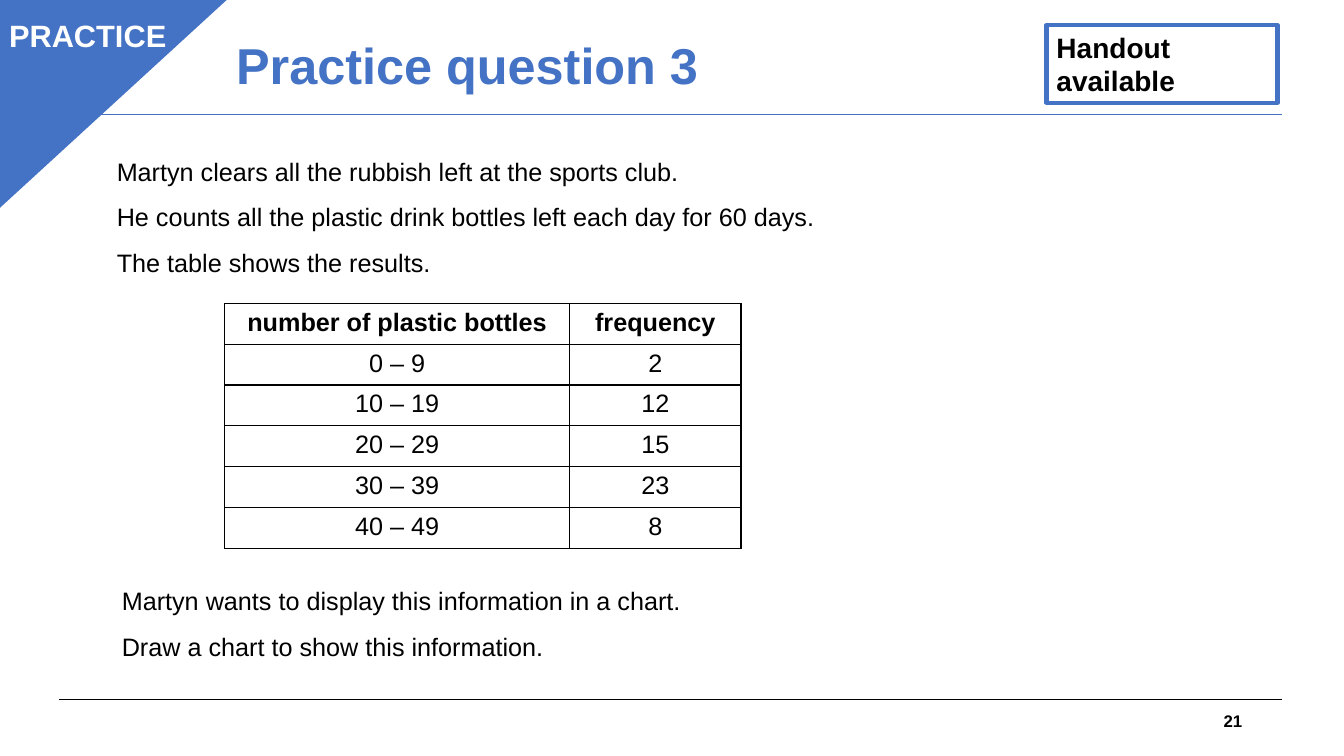
from dataclasses import dataclass

from lxml import etree
from pptx import Presentation, util as u
from pptx.dml.color import RGBColor
from pptx.enum import shapes, text
from pptx.oxml import ns

Inches = u.Inches


@dataclass(frozen=True)
class Theme:
    font: str = "Arial"
    blue: str = "4472C4"
    black: str = "000000"
    white: str = "FFFFFF"
    title: int = 36
    badge: int = 22
    label: int = 20
    body: int = 18
    footer: int = 12


THEME = Theme()
ALIGN = text.PP_ALIGN
ANCHOR = text.MSO_ANCHOR


def color(value):
    return RGBColor.from_string(value)


def write(frame, lines, size=THEME.body, fill=THEME.black, bold=False,
          align=ALIGN.LEFT, spacing=None):
    """Fill a text frame, one paragraph for each line."""
    for index, line in enumerate(lines):
        paragraph = frame.add_paragraph() if index else frame.paragraphs[0]
        paragraph.text = line
        paragraph.alignment = align
        if spacing:
            paragraph.line_spacing = spacing
        for run in paragraph.runs:
            run.font.name = THEME.font
            run.font.size = u.Pt(size)
            run.font.bold = bold
            run.font.color.rgb = color(fill)


def add_text(slide, box, lines, anchor=ANCHOR.TOP, wrap=True, **text_format):
    shape = slide.shapes.add_textbox(*map(Inches, box))
    shape.text_frame.word_wrap = wrap
    shape.text_frame.vertical_anchor = anchor
    write(shape.text_frame, lines, **text_format)


def add_rule(slide, y, line_color):
    """Draw a thin line across the content width."""
    rule = slide.shapes.add_connector(
        shapes.MSO_CONNECTOR.STRAIGHT,
        Inches(0.59), Inches(y), Inches(12.72), Inches(y))
    rule.line.color.rgb = color(line_color)
    rule.line.width = u.Pt(0.75)
    etree.SubElement(rule._element.spPr, ns.qn("a:effectLst"))


def add_outlined(slide, kind, box, line_width):
    shape = slide.shapes.add_shape(kind, *map(Inches, box))
    shape.shadow.inherit = False
    shape.fill.background()
    shape.line.color.rgb = color(THEME.blue)
    shape.line.width = u.Pt(line_width)
    return shape


def add_corner(slide, box):
    """Place the blue triangle in the top left corner."""
    corner = add_outlined(slide, shapes.MSO_SHAPE.ISOSCELES_TRIANGLE, box, 1)
    corner.adjustments[0] = 0
    corner.fill.solid()
    corner.fill.fore_color.rgb = color(THEME.blue)
    corner._element.spPr.find(ns.qn("a:xfrm")).set("flipV", "1")


def add_label(slide, box, label):
    shape = add_outlined(slide, shapes.MSO_SHAPE.RECTANGLE, box, 3)
    shape.text_frame.word_wrap = True
    shape.text_frame.vertical_anchor = ANCHOR.TOP
    write(shape.text_frame, [label], size=THEME.label, bold=True)


def add_borders(cell):
    properties = cell._tc.get_or_add_tcPr()
    for side in ("lnL", "lnR", "lnT", "lnB"):
        border = etree.SubElement(properties, ns.qn(f"a:{side}"), w=str(u.Pt(1)))
        fill = etree.SubElement(border, ns.qn("a:solidFill"))
        etree.SubElement(fill, ns.qn("a:srgbClr"), val=THEME.black)


def add_frequency_table(slide, left, top, widths, row_height, rows):
    table = slide.shapes.add_table(
        len(rows), len(widths), Inches(left), Inches(top),
        Inches(sum(widths)), Inches(row_height * len(rows))).table
    table.horz_banding = False
    for column, width in zip(table.columns, widths):
        column.width = Inches(width)
    for row_index, values in enumerate(rows):
        for column_index, value in enumerate(values):
            cell = table.cell(row_index, column_index)
            add_borders(cell)
            cell.fill.solid()
            cell.fill.fore_color.rgb = color(THEME.white)
            write(cell.text_frame, [value], bold=row_index == 0,
                  align=ALIGN.CENTER)


def main():
    presentation = Presentation()
    presentation.slide_width = Inches(13.33)
    presentation.slide_height = Inches(7.5)
    slide = presentation.slides.add_slide(presentation.slide_layouts[6])

    # Header and footer
    add_rule(slide, 6.94, THEME.black)
    add_rule(slide, 1.14, THEME.blue)
    add_text(slide, (-0.03, 0.12, 9.33, 1.11), ["Practice question 3"],
             anchor=ANCHOR.MIDDLE, size=THEME.title, fill=THEME.blue,
             bold=True, align=ALIGN.CENTER, spacing=0.9)
    add_corner(slide, (-0.03, -0.02, 2.29, 2.1))
    add_text(slide, (-0.03, 0.12, 1.8, 0.47), ["PRACTICE"], size=THEME.badge,
             fill=THEME.white, bold=True, align=ALIGN.CENTER)
    add_label(slide, (10.38, 0.25, 2.29, 0.77), "Handout\navailable")
    add_text(slide, (9.42, 6.95, 3, 0.4), ["21"], anchor=ANCHOR.MIDDLE,
             size=THEME.footer, bold=True, align=ALIGN.RIGHT)

    # Question and data
    add_text(slide, (1.06, 1.35, 7.19, 1.41), [
        "Martyn clears all the rubbish left at the sports club.",
        "He counts all the plastic drink bottles left each day for 60 days.",
        "The table shows the results.",
    ], wrap=False, spacing=1.5)
    add_frequency_table(slide, 2.23, 3.01, (3.42, 1.7), 0.405, [
        ("number of plastic bottles", "frequency"),
        ("0 – 9", "2"),
        ("10 – 19", "12"),
        ("20 – 29", "15"),
        ("30 – 39", "23"),
        ("40 – 49", "8"),
    ])

    # Task
    add_text(slide, (1.11, 5.61, 9.41, 0.95), [
        "Martyn wants to display this information in a chart.",
        "Draw a chart to show this information.",
    ], spacing=1.5)

    presentation.save("out.pptx")


if __name__ == "__main__":
    main()
